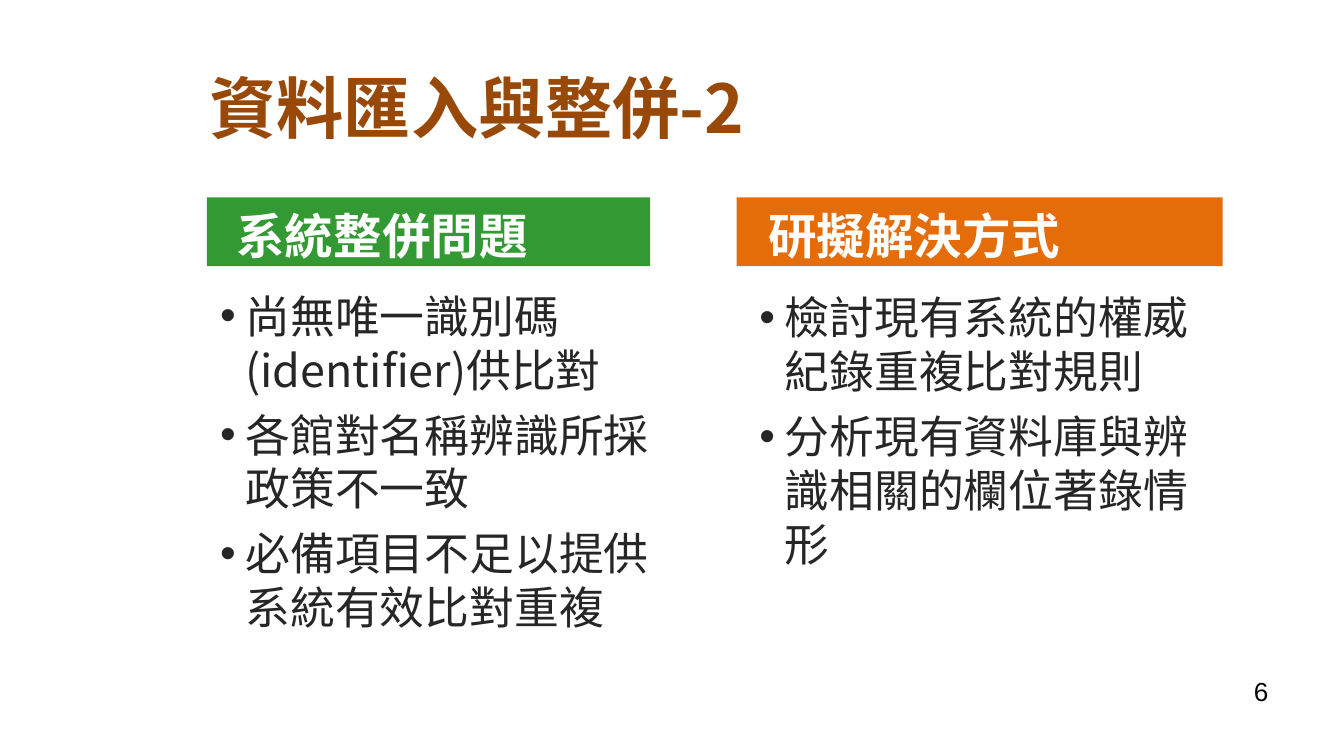
"""Build a slide that sets system merging problems beside planned solutions."""
import pptx
import pptx.dml.color
import pptx.enum.shapes
import pptx.enum.text
import pptx.oxml.ns
import pptx.util
from lxml import etree

Cm, Pt = pptx.util.Cm, pptx.util.Pt
RGB = pptx.dml.color.RGBColor
ALIGN = pptx.enum.text.PP_ALIGN
ANCHOR = pptx.enum.text.MSO_ANCHOR

BROWN = RGB(0x98, 0x48, 0x07)
GREEN = RGB(0x33, 0x99, 0x33)
ORANGE = RGB(0xE4, 0x6D, 0x0A)
WHITE = RGB(0xFF, 0xFF, 0xFF)
DARK = RGB(0x26, 0x26, 0x26)
BLACK = RGB(0, 0, 0)
SANS = "Noto Sans CJK SC"

TITLE = "資料匯入與整併-2"
PAGE = "6"
COLUMNS = [
    {"head": "系統整併問題", "fill": GREEN,
     "bar": (3.91, 8.38), "label": (4.22, 6.68), "body": (3.91, 5.33, 8.79, 6.83),
     "items": ["尚無唯一識別碼\v(identifier)供比對",
               "各館對名稱辨識所採政策不一致",
               "必備項目不足以提供系統有效比對重複"]},
    {"head": "研擬解決方式", "fill": ORANGE,
     "bar": (13.92, 9.19), "label": (14.27, 6.17), "body": (14.1, 5.36, 8.99, 5.59),
     "items": ["檢討現有系統的權威紀錄重複比對規則",
               "分析現有資料庫與辨識相關的欄位著錄情形"]},
]
BAR_TOP, BAR_HIGH = 3.73, 1.3
LABEL_TOP, LABEL_HIGH = 3.81, 1.32
INDENT = Cm(0.48)

TITLE_FONT = {"name": SANS, "size": Pt(36), "bold": True, "color": BROWN}
HEAD_FONT = {"name": SANS, "size": Pt(26), "bold": True, "color": WHITE}
BODY_FONT = {"name": SANS, "size": Pt(24), "color": DARK}
PAGE_FONT = {"name": "Arial", "size": Pt(14), "color": BLACK}


def style(run, form):
    for key, value in form.items():
        if key == "color":
            run.font.color.rgb = value
        else:
            setattr(run.font, key, value)
    east = etree.SubElement(run.font._element, pptx.oxml.ns.qn("a:ea"))
    east.set("typeface", form["name"])


def bullet(para):
    props = para._p.get_or_add_pPr()
    props.set("marL", str(INDENT))
    props.set("indent", str(-INDENT))
    etree.SubElement(props, pptx.oxml.ns.qn("a:buFont")).set("typeface", "Arial")
    etree.SubElement(props, pptx.oxml.ns.qn("a:buChar")).set("char", "•")


def write(shapes, place, lines, form, layout=None, dots=False, anchor=ANCHOR.TOP):
    frame = shapes.add_textbox(*map(Cm, place)).text_frame
    frame.word_wrap = True
    frame.vertical_anchor = anchor
    for num, line in enumerate(lines):
        para = frame.add_paragraph() if num else frame.paragraphs[0]
        para.text = line
        for key, value in (layout or {}).items():
            setattr(para, key, value)
        if dots:
            bullet(para)
        for run in para.runs:
            style(run, form)


def column(slide, col):
    group = slide.shapes.add_group_shape()
    left, wide = col["bar"]
    bar = group.shapes.add_shape(
        pptx.enum.shapes.MSO_SHAPE.RECTANGLE,
        *map(Cm, (left, BAR_TOP, wide, BAR_HIGH)))
    bar.shadow.inherit = False
    bar.fill.solid()
    bar.fill.fore_color.rgb = col["fill"]
    bar.line.fill.background()
    left, wide = col["label"]
    write(group.shapes, (left, LABEL_TOP, wide, LABEL_HIGH), [col["head"]],
          HEAD_FONT, {"line_spacing": Pt(30)})
    write(slide.shapes, col["body"], col["items"], BODY_FONT,
          {"space_after": Pt(6)}, dots=True)


def main():
    deck = pptx.Presentation()
    deck.slide_width, deck.slide_height = Cm(25.4), Cm(14.29)
    slide = deck.slides.add_slide(deck.slide_layouts[6])
    write(slide.shapes, (3.71, 1.35, 19.71, 1.32), [TITLE], TITLE_FONT,
          anchor=ANCHOR.MIDDLE)
    for col in COLUMNS:
        column(slide, col)
    write(slide.shapes, (23.34, 12.65, 0.99, 0.86), [PAGE], PAGE_FONT,
          {"alignment": ALIGN.CENTER})
    deck.save("out.pptx")


if __name__ == "__main__":
    main()
